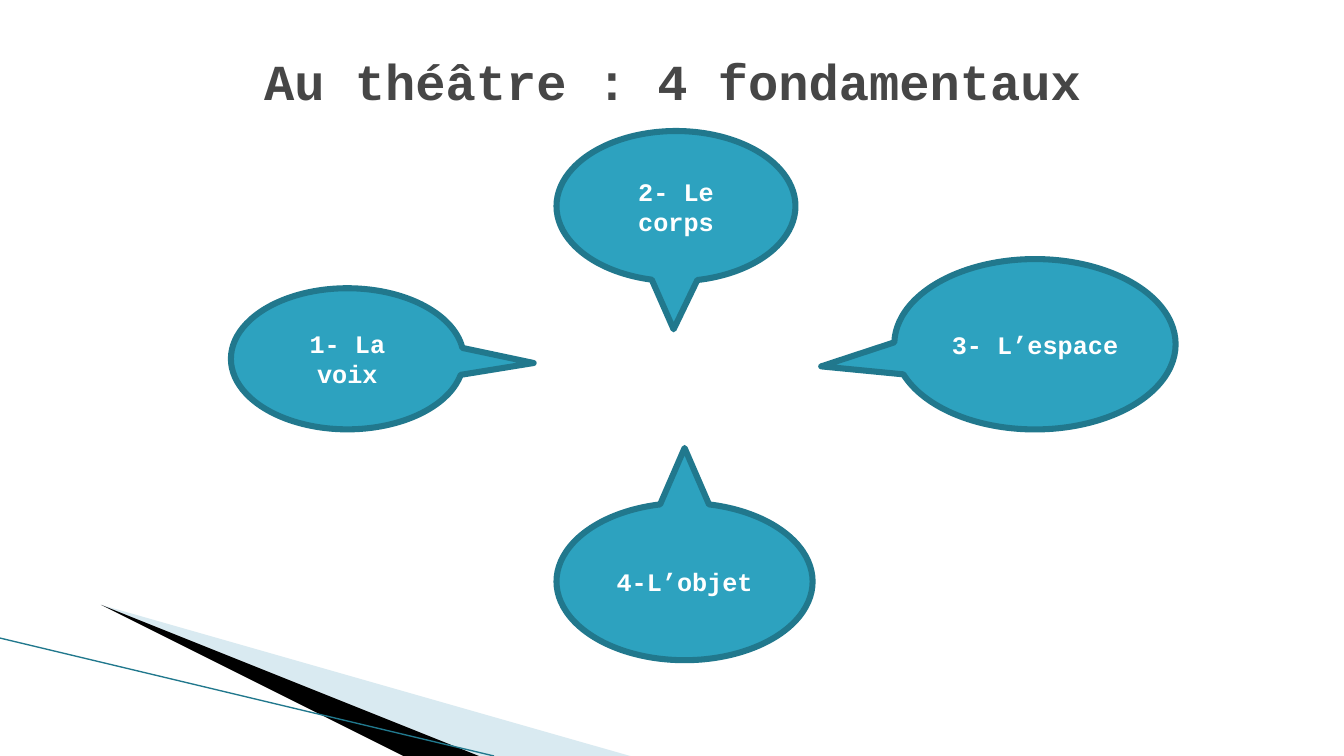
from lxml.etree import SubElement
from pptx import Presentation
from pptx.dml.color import RGBColor
from pptx.enum.shapes import MSO_CONNECTOR, MSO_SHAPE
from pptx.enum.text import MSO_ANCHOR, PP_ALIGN
from pptx.oxml.ns import qn
from pptx.util import Inches, Pt

TITLE = "Au théâtre : 4 fondamentaux"
# text, (left, top, width, height), tip offset from the centre
BUBBLES = [
    ("3- L’espace", (8.87, 2.57, 2.79, 1.69), (-0.76, 0.13)),
    ("4-L’objet", (5.52, 4.99, 2.54, 1.56), (0, -0.85)),
    ("2- Le corps", (5.52, 1.3, 2.37, 1.49), (-0.01, 0.82)),
    ("1- La voix", (2.29, 2.86, 2.31, 1.4), (0.8, 0.03)),
]

FONT = "Courier New"
GREY = RGBColor(0x46, 0x46, 0x46)
TEAL = RGBColor(0x2D, 0xA2, 0xBF)
DARK = RGBColor(0x21, 0x78, 0x8D)
PALE = RGBColor(0xA0, 0xCB, 0xDC)
BLACK = RGBColor(0, 0, 0)
WHITE = RGBColor(0xFF, 0xFF, 0xFF)

# fill, opacity in percent, corner points
BANDS = [
    (PALE, 40, [(0.73, 6.5), (7.93, 7.5), (6.08, 7.5)]),
    (BLACK, 100, [(0.71, 6.49), (6.05, 7.5), (4.92, 7.5)]),
]
EDGE = [(0, 6.33), (4.9, 7.5)]


def style(frame, size, color):
    frame.word_wrap = True
    frame.vertical_anchor = MSO_ANCHOR.MIDDLE
    para = frame.paragraphs[0]
    para.alignment = PP_ALIGN.CENTER
    font = para.font
    font.name, font.size, font.bold = FONT, Pt(size), True
    font.color.rgb = color


deck = Presentation()
deck.slide_width, deck.slide_height = Inches(13.33), Inches(7.5)
slide = deck.slides.add_slide(deck.slide_layouts[5])
shapes = slide.shapes

# Corner bands
for color, alpha, points in BANDS:
    pen = shapes.build_freeform(*points[0], scale=Inches(1))
    pen.add_line_segments(points[1:], close=True)
    band = pen.convert_to_shape()
    band.shadow.inherit = False
    band.fill.solid()
    band.fill.fore_color.rgb = color
    band.line.fill.background()
    if alpha < 100:
        tint = band.fill._xPr.find(qn("a:solidFill"))[0]
        SubElement(tint, qn("a:alpha"), val=str(alpha * 1000))

# Thin edge line
ends = [Inches(v) for point in EDGE for v in point]
edge = shapes.add_connector(MSO_CONNECTOR.STRAIGHT, *ends)
edge.line.color.rgb = DARK
edge.line.width = Pt(0.95)
SubElement(edge._element.spPr, qn("a:effectLst"))

# Title
title = shapes.title
title.left, title.top = Inches(0.67), Inches(0.3)
title.width, title.height = Inches(12), Inches(0.99)
title.text_frame.text = TITLE
style(title.text_frame, 36, GREY)

# Speech bubbles
for text, box, tip in BUBBLES:
    bubble = shapes.add_shape(
        MSO_SHAPE.OVAL_CALLOUT, *[Inches(v) for v in box])
    bubble.adjustments[0], bubble.adjustments[1] = tip
    bubble.shadow.inherit = False
    bubble.fill.solid()
    bubble.fill.fore_color.rgb = TEAL
    bubble.line.color.rgb = DARK
    bubble.line.width = Pt(4.33)
    SubElement(bubble.line._ln, qn("a:round"))
    bubble.text_frame.text = text
    style(bubble.text_frame, 18, WHITE)

deck.save("out.pptx")
